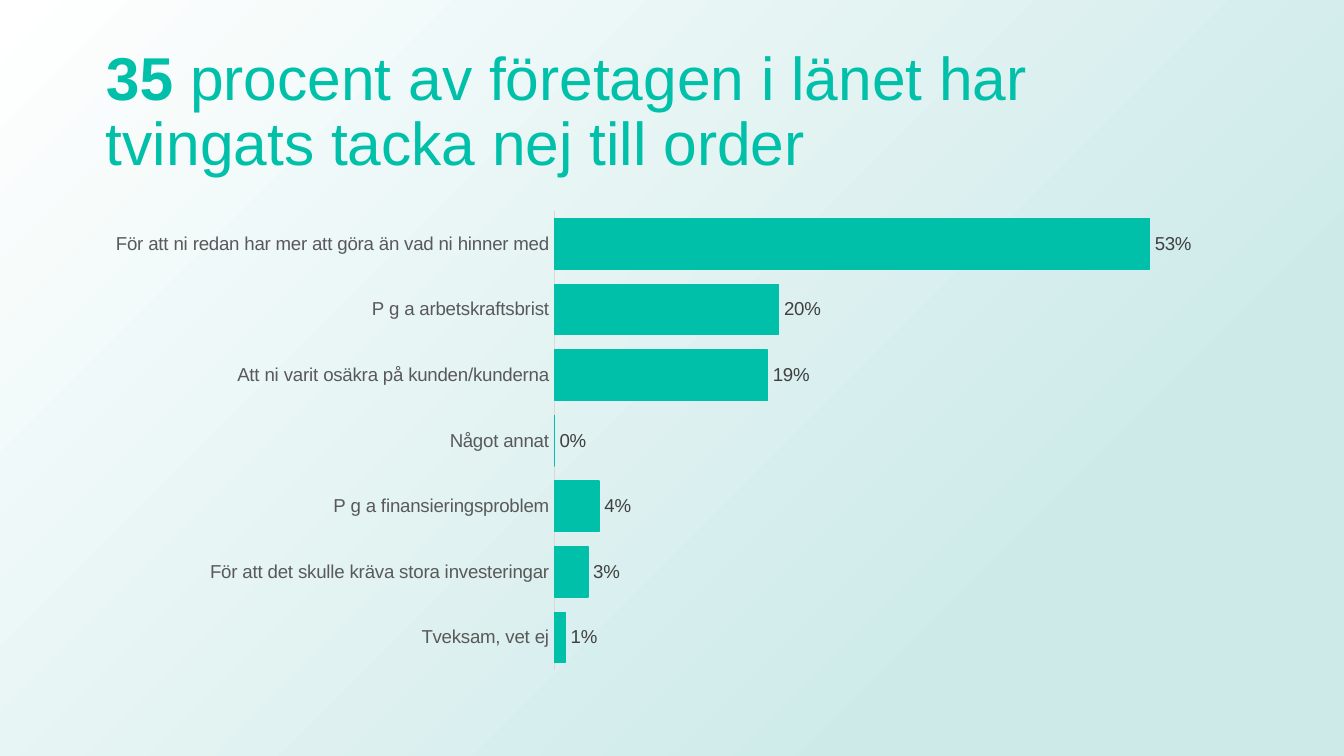
from lxml import etree
from pptx import Presentation
from pptx.chart.data import CategoryChartData
from pptx.dml.color import RGBColor
from pptx.enum.chart import XL_CHART_TYPE, XL_LABEL_POSITION, XL_TICK_MARK
from pptx.enum.shapes import MSO_SHAPE
from pptx.enum.text import MSO_ANCHOR
from pptx.oxml.ns import qn
from pptx.util import Inches, Pt

BAR = XL_CHART_TYPE.BAR_CLUSTERED
OUTSIDE = XL_LABEL_POSITION.OUTSIDE_END
NO_TICK = XL_TICK_MARK.NONE
RECTANGLE = MSO_SHAPE.RECTANGLE
MIDDLE = MSO_ANCHOR.MIDDLE
TEAL = "00C0A9"
LEFT, WIDTH = Inches(0.69), Inches(8.62)


def color(value):
    return RGBColor.from_string(value)


def style_font(font, size, value):
    font.name = "Arial"
    font.size = Pt(size)
    font.color.rgb = color(value)


deck = Presentation()
deck.slide_width = Inches(10)
deck.slide_height = Inches(10 * 9 / 16)
page = deck.slides.add_slide(deck.slide_layouts[6])

backdrop = page.shapes.add_shape(RECTANGLE, 0, 0, deck.slide_width, deck.slide_height)
backdrop.shadow.inherit = False
backdrop.line.fill.background()
backdrop.fill.gradient()
for stop, (position, value) in zip(backdrop.fill.gradient_stops, [(0.23, "CDEAE9"), (1, "FFFFFF")]):
    stop.position = position
    stop.color.rgb = color(value)
gradient = backdrop.fill._xPr.find(qn("a:gradFill"))
gradient.remove(gradient.find(qn("a:lin")))
circle = etree.SubElement(gradient, qn("a:path"), {"path": "circle"})
etree.SubElement(circle, qn("a:fillToRect"), {"l": "100000", "t": "100000"})

title = page.shapes.add_textbox(LEFT, Inches(0.3), WIDTH, Inches(1.09))
frame = title.text_frame
frame.word_wrap = True
frame.vertical_anchor = MIDDLE
para = frame.paragraphs[0]
para.line_spacing = 0.9
for text, bold in [("35 ", True), ("procent av företagen i länet har tvingats tacka nej till order", False)]:
    span = para.add_run()
    span.text = text
    span.font.bold = bold
    style_font(span.font, 32.4, TEAL)

reasons = {
    "För att ni redan har mer att göra än vad ni hinner med": 0.53,
    "P g a arbetskraftsbrist": 0.2,
    "Att ni varit osäkra på kunden/kunderna": 0.19,
    "Något annat": 0,
    "P g a finansieringsproblem": 0.04,
    "För att det skulle kräva stora investeringar": 0.03,
    "Tveksam, vet ej": 0.01,
}
data = CategoryChartData(number_format="0%")
data.categories = list(reasons)
data.add_series("Series 1", list(reasons.values()))
chart = page.shapes.add_chart(BAR, LEFT, Inches(1.5), WIDTH, Inches(3.56), data).chart
chart.has_legend = False
chart.has_title = False
chart.font.name = "Calibri"
chart.font.size = Pt(10)
chart.font.color.rgb = color("000000")

category_axis = chart.category_axis
category_axis.reverse_order = True
category_axis.major_tick_mark = NO_TICK
category_axis.minor_tick_mark = NO_TICK
category_axis.format.line.color.rgb = color("D9D9D9")
category_axis.format.line.width = Pt(0.75)
style_font(category_axis.tick_labels.font, 10, "595959")
chart.value_axis.visible = False
chart.value_axis.has_major_gridlines = False

plot = chart.plots[0]
plot.gap_width = 30
plot.vary_by_categories = False
series = plot.series[0]
series.format.fill.solid()
series.format.fill.fore_color.rgb = color(TEAL)
series.format.line.color.rgb = color(TEAL)
series.format.line.width = Pt(0.75)
labels = series.data_labels
labels.show_value = True
labels.number_format = "0%"
labels.number_format_is_linked = False
labels.position = OUTSIDE
style_font(labels.font, 10, "404040")

deck.save("out.pptx")
